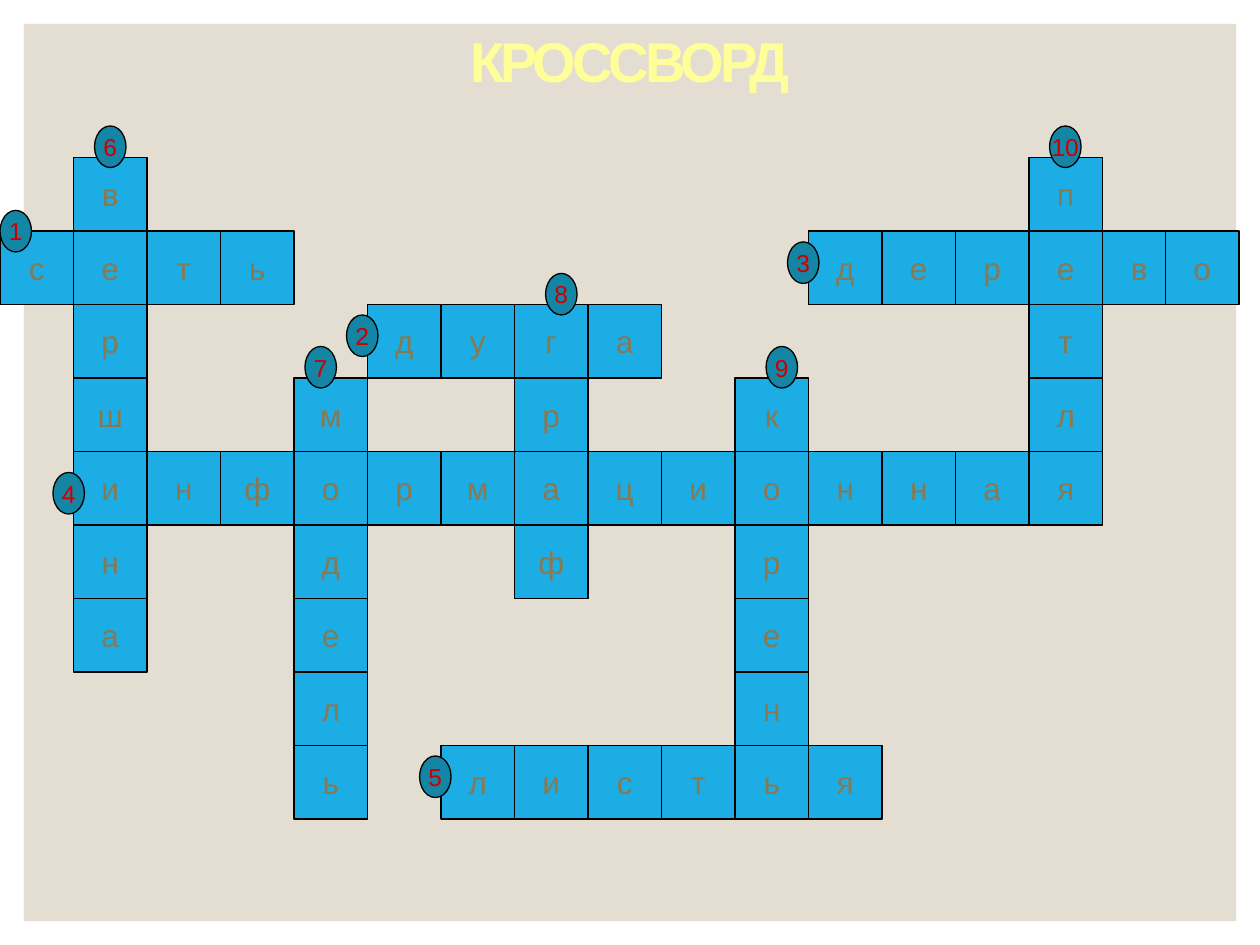
from dataclasses import dataclass

from pptx import Presentation
from pptx.dml.color import RGBColor
from pptx.enum.shapes import MSO_SHAPE
from pptx.enum.text import MSO_ANCHOR, PP_ALIGN
from pptx.util import Inches, Pt

RECTANGLE, OVAL = MSO_SHAPE.RECTANGLE, MSO_SHAPE.OVAL
MIDDLE, CENTER = MSO_ANCHOR.MIDDLE, PP_ALIGN.CENTER


@dataclass(frozen=True)
class Theme:
    font: str = "Arial"
    panel: str = "E3DED1"
    title: str = "FFFF99"
    cell: str = "1CADE4"
    letter: str = "887952"
    marker: str = "1485A4"
    number: str = "CC0000"
    outline: str = "000000"
    title_size: int = 32
    letter_size: int = 18
    number_size: int = 14
    line_width: float = 0.75


theme = Theme()


def write_text(shape, text, size, color):
    frame = shape.text_frame
    frame.word_wrap = False
    frame.vertical_anchor = MIDDLE
    paragraph = frame.paragraphs[0]
    paragraph.alignment = CENTER
    run = paragraph.add_run()
    run.text = text
    run.font.name = theme.font
    run.font.size = Pt(size)
    run.font.color.rgb = RGBColor.from_string(color)
    return run


def add_block(kind, left, top, width, height, fill, outlined=True):
    shape = slide.shapes.add_shape(
        kind, Inches(left), Inches(top), Inches(width), Inches(height))
    shape.shadow.inherit = False
    shape.fill.solid()
    shape.fill.fore_color.rgb = RGBColor.from_string(fill)
    if outlined:
        shape.line.color.rgb = RGBColor.from_string(theme.outline)
        shape.line.width = Pt(theme.line_width)
    else:
        shape.line.fill.background()
    return shape


presentation = Presentation()
presentation.slide_width = Inches(10)
presentation.slide_height = Inches(7.5)
slide = presentation.slides.add_slide(presentation.slide_layouts[6])

# Background panel
add_block(RECTANGLE, 0.19, 0.19, 9.62, 7.12, theme.panel, outlined=False)

# Title, with tightened letter spacing
title = slide.shapes.add_textbox(Inches(2), Inches(0.19), Inches(6), Inches(0.57))
title_run = write_text(title, "КРОССВОРД", theme.title_size, theme.title)
title_run.font.bold = True
title_run.font._element.set("spc", "-230")

# Words: number, word, first column, first row, direction, marker left and top
ACROSS, DOWN = (1, 0), (0, 1)
words = [
    (4, "информационная", 1, 4, ACROSS, 0.42, 3.75),
    (6, "вершина", 1, 0, DOWN, 0.75, 1),
    (1, "сеть", 0, 1, ACROSS, 0, 1.67),
    (7, "модель", 4, 3, DOWN, 2.42, 2.75),
    (8, "граф", 7, 2, DOWN, 4.33, 2.17),
    (2, "дуга", 5, 2, ACROSS, 2.75, 2.5),
    (9, "корень", 10, 3, DOWN, 6.08, 2.75),
    (5, "листья", 6, 8, ACROSS, 3.33, 6),
    (10, "петля", 14, 0, DOWN, 8.33, 1),
    (3, "дерево", 11, 1, ACROSS, 6.25, 1.92),
]

# Letter cells: a crossing shared by two words is drawn once
CELL = 7 / 12
GRID_TOP = 1.25
LAST_LEFT = 9.25  # the last column overlaps its neighbour to stay on the slide
letters = {}
for _, word, column, row, (step_x, step_y), _, _ in words:
    for index, letter in enumerate(word):
        letters[column + index * step_x, row + index * step_y] = letter

for (column, row), letter in letters.items():
    left = min(column * CELL, LAST_LEFT)
    cell = add_block(RECTANGLE, left, GRID_TOP + row * CELL, CELL, CELL, theme.cell)
    write_text(cell, letter, theme.letter_size, theme.letter)

# Number markers
for number, _, _, _, _, left, top in words:
    marker = add_block(OVAL, left, top, 0.25, 0.33, theme.marker)
    write_text(marker, str(number), theme.number_size, theme.number)

presentation.save("out.pptx")
